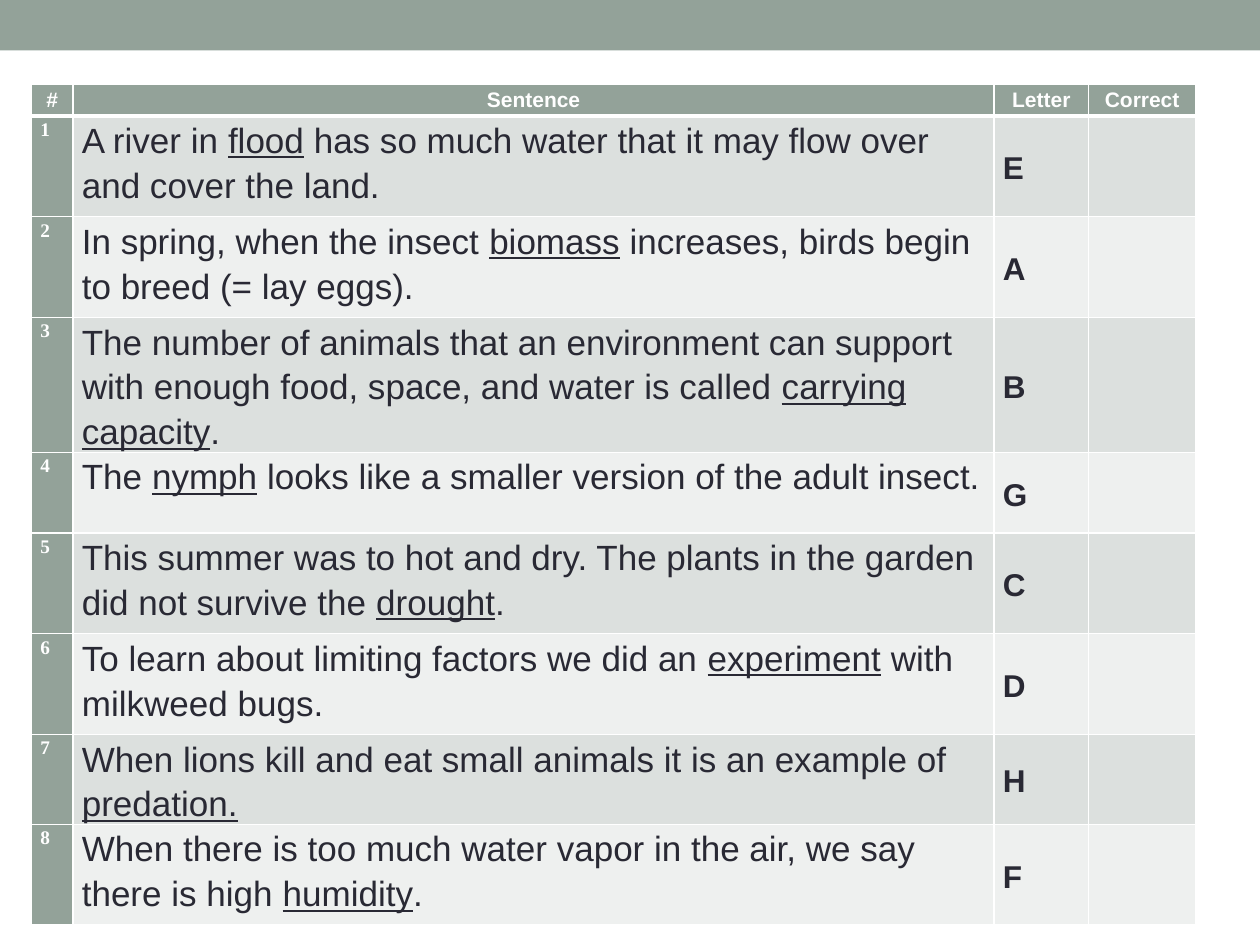
from lxml import etree
from pptx import Presentation
from pptx.dml.color import RGBColor
from pptx.enum.shapes import MSO_SHAPE
from pptx.enum.text import MSO_ANCHOR, PP_ALIGN
from pptx.oxml.ns import qn
from pptx.util import Inches, Pt

RECT = MSO_SHAPE.RECTANGLE
TOP, MIDDLE = MSO_ANCHOR.TOP, MSO_ANCHOR.MIDDLE
LEFT, CENTER, JUSTIFY = PP_ALIGN.LEFT, PP_ALIGN.CENTER, PP_ALIGN.JUSTIFY

COLORS = {
    "sage": "93A299",
    "band_dark": "DCE0DE",
    "band_light": "EEF0EF",
    "ink": "292934",
    "white": "FFFFFF",
}
HEADERS = ["#", "Sentence", "Letter", "Correct"]
COL_WIDTHS = [0.33, 7.31, 0.75, 0.85]
ROW_HEIGHTS = [0.25, 0.8, 0.8, 0.8, 0.64, 0.8, 0.8, 0.38, 0.8]
ANSWERS = [
    ("A river in ", "flood", " has so much water that it may flow over and cover the land.", "E"),
    ("In spring, when the insect ", "biomass", " increases, birds begin to breed (= lay eggs).", "A"),
    ("The number of animals that an environment can support with enough food, space, "
     "and water is called ", "carrying capacity", ".", "B"),
    ("The ", "nymph", " looks like a smaller version of the adult insect.", "G"),
    ("This summer was to hot and dry. The plants in the garden did not survive the ",
     "drought", ".", "C"),
    ("To learn about limiting factors we did an ", "experiment", " with milkweed bugs.", "D"),
    ("When lions kill and eat small animals it is an example of ", "predation.", "", "H"),
    ("When there is too much water vapor in the air, we say there is high ",
     "humidity", ".", "F"),
]


class SlideBuilder:
    def __init__(self, slide, font="Arial"):
        self.slide = slide
        self.font = font

    def color(self, name):
        return RGBColor.from_string(COLORS[name])

    def bar(self, x, y, w, h, fill):
        sp = self.slide.shapes.add_shape(RECT, Inches(x), Inches(y), Inches(w), Inches(h))
        sp.shadow.inherit = False
        sp.fill.solid()
        sp.fill.fore_color.rgb = self.color(fill)
        sp.line.fill.background()

    def table(self, x, y, widths, heights):
        frame = self.slide.shapes.add_table(
            len(heights), len(widths), Inches(x), Inches(y),
            Inches(sum(widths)), Inches(sum(heights)))
        table = frame.table
        table.first_row = False
        table.horz_banding = False
        for col, width in zip(table.columns, widths):
            col.width = Inches(width)
        for row, height in zip(table.rows, heights):
            row.height = Inches(height)
        return table

    def cell(self, cell, fill, top=1, bottom=1, anchor=TOP):
        cell.margin_left = cell.margin_right = Inches(0.07)
        cell.margin_top = cell.margin_bottom = 0
        cell.vertical_anchor = anchor
        tc_pr = cell._tc.get_or_add_tcPr()
        for side, width in (("lnL", 1), ("lnR", 1), ("lnT", top), ("lnB", bottom)):
            ln = etree.SubElement(tc_pr, qn(f"a:{side}"), w=str(Pt(width)))
            solid = etree.SubElement(ln, qn("a:solidFill"))
            etree.SubElement(solid, qn("a:srgbClr"), val=COLORS["white"])
        cell.fill.solid()
        cell.fill.fore_color.rgb = self.color(fill)

    def text(self, cell, parts, size, color, bold=False, align=LEFT, space=None, font=None):
        p = cell.text_frame.paragraphs[0]
        p.alignment = align
        p.line_spacing = 1.15
        if space is not None:
            p.space_before = p.space_after = Pt(space)
        for i, part in enumerate(parts):
            if not part:
                continue
            r = p.add_run()
            r.text = part
            r.font.name = font or self.font
            r.font.size = Pt(size)
            r.font.bold = bold
            r.font.underline = i == 1
            r.font.color.rgb = self.color(color)


def main():
    prs = Presentation()
    prs.slide_width, prs.slide_height = Inches(10), Inches(7.5)
    s = SlideBuilder(prs.slides.add_slide(prs.slide_layouts[6]))
    s.bar(0, 0, 10, 0.4, "sage")
    table = s.table(0.25, 0.67, COL_WIDTHS, ROW_HEIGHTS)

    for col, header in enumerate(HEADERS):
        cell = table.cell(0, col)
        s.cell(cell, "sage", bottom=3)
        s.text(cell, [header], 12, "white", bold=True, align=CENTER, space=6)

    for row, (before, term, after, letter) in enumerate(ANSWERS, start=1):
        band = "band_dark" if row % 2 else "band_light"
        top = 3 if row == 1 else 1
        number, sentence, answer, correct = (table.cell(row, c) for c in range(4))
        s.cell(number, "sage", top)
        s.cell(sentence, band, top)
        s.cell(answer, band, top, anchor=MIDDLE)
        s.cell(correct, band, top)
        s.text(number, [str(row)], 11, "white", bold=True, align=JUSTIFY, space=6,
               font="Times New Roman")
        s.text(sentence, [before, term, after], 20, "ink")
        s.text(answer, [letter], 18, "ink", bold=True)

    prs.save("out.pptx")


if __name__ == "__main__":
    main()
